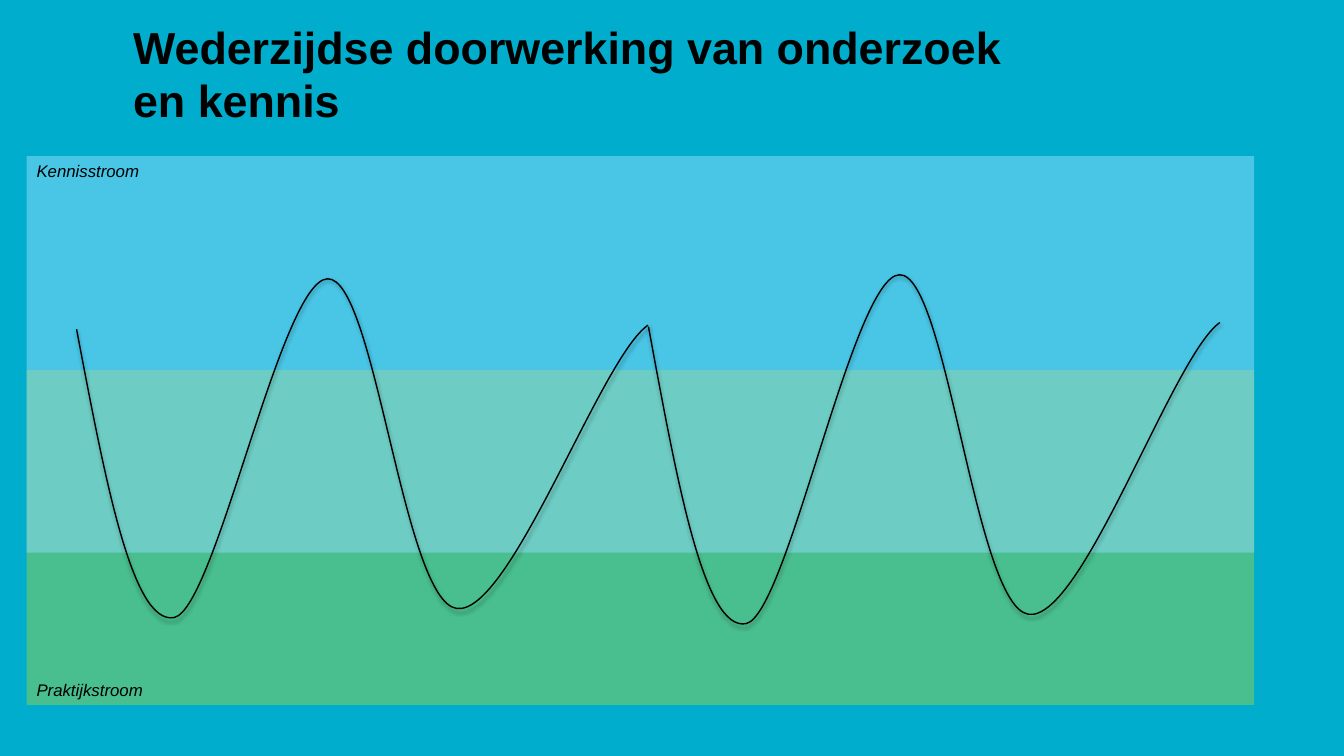
import pptx
import pptx.util
import pptx.dml.color
import pptx.enum.shapes
import pptx.enum.text
import pptx.oxml
import pptx.oxml.ns

Pt = pptx.util.Pt
RGBColor = pptx.dml.color.RGBColor
ANCHOR = pptx.enum.text.MSO_ANCHOR
LEFT = pptx.enum.text.PP_ALIGN.LEFT
qn = pptx.oxml.ns.qn
NS = pptx.oxml.ns.nsdecls("a")

# Content
TITLE = "Wederzijdse doorwerking van onderzoek en kennis"
BLACK = RGBColor(0x00, 0x00, 0x00)
BACKGROUND = RGBColor(0x00, 0xAD, 0xCD)
GREEN = RGBColor(0x92, 0xD0, 0x50)
BLUE = RGBColor(0x92, 0xDD, 0xFD)

# Streams: label, top, height, colour, text anchor
STREAM_LEFT, STREAM_WIDTH = 19, 876.9
STREAMS = [
    ("Praktijkstroom", 264.3, 239.2, GREEN, ANCHOR.BOTTOM),
    ("Kennisstroom", 111.5, 283.3, BLUE, ANCHOR.TOP),
]

# Wave: start point, then two control points and an end point per curve
WAVE = [
    (0, 36),
    (20.2, 141.8), (39.6, 247.7), (69.8, 241.9),
    (99.4, 235.4), (146.2, 0.7), (179.3, 0),
    (213.1, -1.4), (233.3, 229.7), (271.4, 235.4),
    (309.6, 241.2), (374.4, 56.2), (408.2, 33.1),
]
# Left, top and vertical stretch of each wave
WAVES = [(54.7, 199.2, 1), (463.2, 196.3, 1.03)]

SHADOW = (f'<a:effectLst {NS}><a:outerShdw blurRad="{Pt(3.1)}" dist="{Pt(1.6)}" '
          'dir="5400000" rotWithShape="0"><a:srgbClr val="000000">'
          '<a:alpha val="38000"/></a:srgbClr></a:outerShdw></a:effectLst>')


def write(tf, text, size, anchor, bold=False, italic=False):
    tf.word_wrap = True
    tf.vertical_anchor = anchor
    p = tf.paragraphs[0]
    p.alignment = LEFT
    r = p.add_run()
    r.text = text
    r.font.name = "Arial"
    r.font.size = Pt(size)
    r.font.bold, r.font.italic = bold, italic
    r.font.color.rgb = BLACK


def add_stream(s, label, top, height, color, anchor):
    sp = s.shapes.add_shape(pptx.enum.shapes.MSO_SHAPE.RECTANGLE, Pt(STREAM_LEFT),
                            Pt(top), Pt(STREAM_WIDTH), Pt(height))
    sp.shadow.inherit = False
    sp.fill.solid()
    sp.fill.fore_color.rgb = color
    clr = sp._element.spPr.find(".//" + qn("a:srgbClr"))
    clr.append(pptx.oxml.parse_xml(f'<a:alpha {NS} val="50000"/>'))
    sp.line.fill.background()
    write(sp.text_frame, label, 12, anchor, italic=True)


def add_wave(s, left, top, stretch):
    points = [(Pt(left + x), Pt(top + y * stretch)) for x, y in WAVE]
    builder = s.shapes.build_freeform(*points[0], scale=1.0)
    builder.add_line_segments(points[1:], close=False)
    sp = builder.convert_to_shape()
    sp.fill.background()
    sp.line.color.rgb = BLACK
    sp.line.width = Pt(1)
    sp._element.spPr.append(pptx.oxml.parse_xml(SHADOW))

    # Turn each three segments into one Bézier curve
    path = sp._element.find(".//" + qn("a:path"))
    segments = path.findall(qn("a:lnTo"))
    for i in range(0, len(segments), 3):
        curve = pptx.oxml.parse_xml(f"<a:cubicBezTo {NS}/>")
        for segment in segments[i:i + 3]:
            curve.append(segment[0])
            path.remove(segment)
        path.append(curve)


def main():
    prs = pptx.Presentation()
    prs.slide_width, prs.slide_height = Pt(960), Pt(540)
    s = prs.slides.add_slide(prs.slide_layouts[5])
    s.background.fill.solid()
    s.background.fill.fore_color.rgb = BACKGROUND

    # Title
    title = s.shapes.title
    title.left, title.top = Pt(87.84), Pt(9.2)
    title.width, title.height = Pt(648), Pt(85)
    write(title.text_frame, TITLE, 32, ANCHOR.BOTTOM, bold=True)
    title.text_frame.auto_size = pptx.enum.text.MSO_AUTO_SIZE.NONE

    # Streams, overlapping in the middle
    for stream in STREAMS:
        add_stream(s, *stream)

    # Waves running between the streams
    for wave in WAVES:
        add_wave(s, *wave)

    prs.save("out.pptx")


if __name__ == "__main__":
    main()
